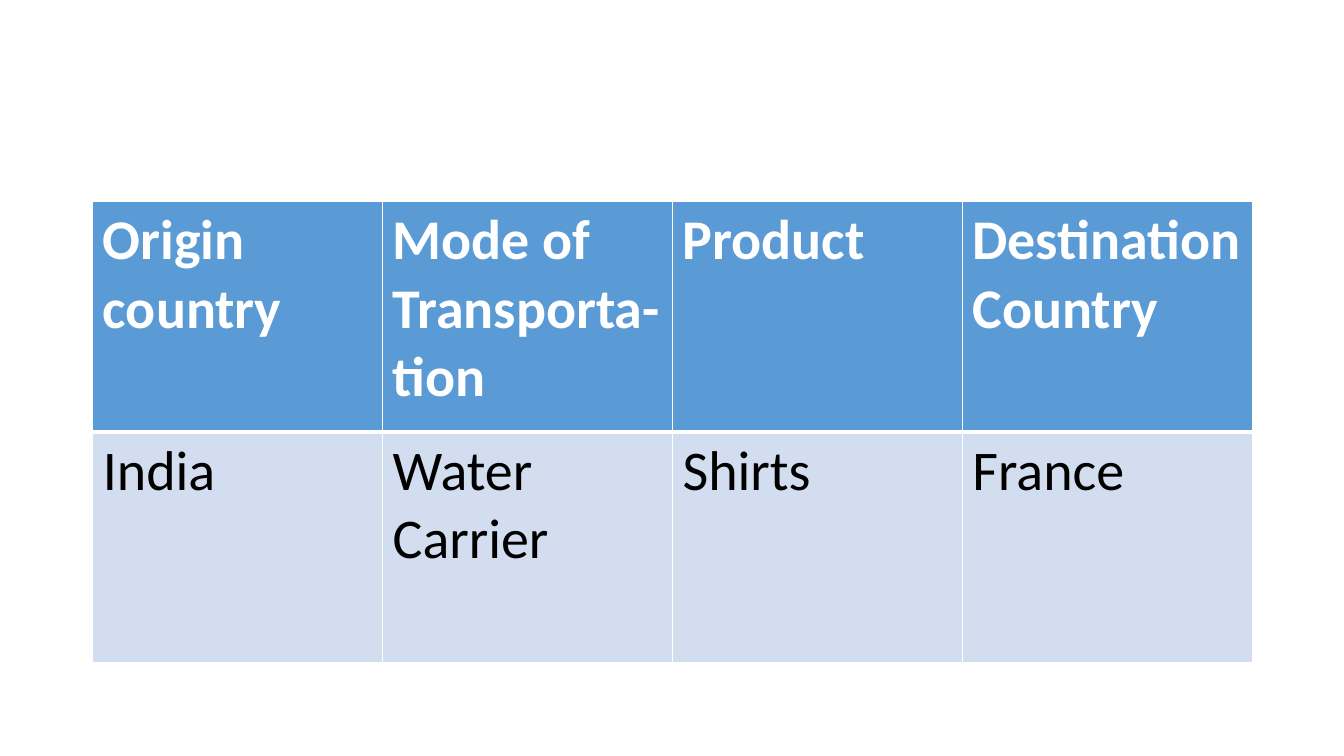
from dataclasses import dataclass

from lxml.etree import SubElement
from pptx import Presentation
from pptx.dml.color import RGBColor
from pptx.oxml.ns import qn
from pptx.util import Inches, Pt

HEADINGS = ["Origin country", "Mode of Transporta-tion", "Product", "Destination\nCountry"]
SHIPMENTS = [["India", "Water Carrier", "Shirts", "France"]]

SLIDE_SIZE = (13.33, 7.5)
TABLE_BOX = (0.92, 2, 11.5, 4.57)


@dataclass(frozen=True)
class Theme:
    font: str = "Calibri"
    size: int = 40
    heading_text: str = "FFFFFF"
    heading_fill: str = "5B9BD5"
    body_text: str = "000000"
    body_fill: str = "D2DEEF"
    border: str = "FFFFFF"
    thin: int = 1
    thick: int = 3


THEME = Theme()


def write_text(frame, text, *, color, bold=False, size=THEME.size, font=THEME.font):
    frame.text = text
    for paragraph in frame.paragraphs:
        for run in paragraph.runs:
            run.font.name = font
            run.font.size = Pt(size)
            run.font.bold = bold
            run.font.color.rgb = RGBColor.from_string(color)


def set_borders(cell, top, bottom):
    """Draw all four sides; call before the fill, which must follow in the XML."""
    properties = cell._tc.get_or_add_tcPr()
    widths = {"a:lnL": THEME.thin, "a:lnR": THEME.thin, "a:lnT": top, "a:lnB": bottom}
    for side, width in widths.items():
        line = SubElement(properties, qn(side), w=str(Pt(width)))
        solid = SubElement(line, qn("a:solidFill"))
        SubElement(solid, qn("a:srgbClr"), val=THEME.border)


def add_shipment_table(slide):
    rows = [HEADINGS] + SHIPMENTS
    left, top, width, height = map(Inches, TABLE_BOX)
    table = slide.shapes.add_table(
        len(rows), len(HEADINGS), left, top, width, height
    ).table
    for row_index, labels in enumerate(rows):
        is_heading = row_index == 0
        upper = THEME.thick if row_index == 1 else THEME.thin
        lower = THEME.thick if is_heading else THEME.thin
        for column_index, label in enumerate(labels):
            cell = table.cell(row_index, column_index)
            set_borders(cell, upper, lower)
            cell.fill.solid()
            cell.fill.fore_color.rgb = RGBColor.from_string(
                THEME.heading_fill if is_heading else THEME.body_fill
            )
            write_text(
                cell.text_frame,
                label,
                color=THEME.heading_text if is_heading else THEME.body_text,
                bold=is_heading,
            )


def main():
    presentation = Presentation()
    presentation.slide_width, presentation.slide_height = map(Inches, SLIDE_SIZE)
    slide = presentation.slides.add_slide(presentation.slide_layouts[6])
    add_shipment_table(slide)
    presentation.save("out.pptx")


if __name__ == "__main__":
    main()
